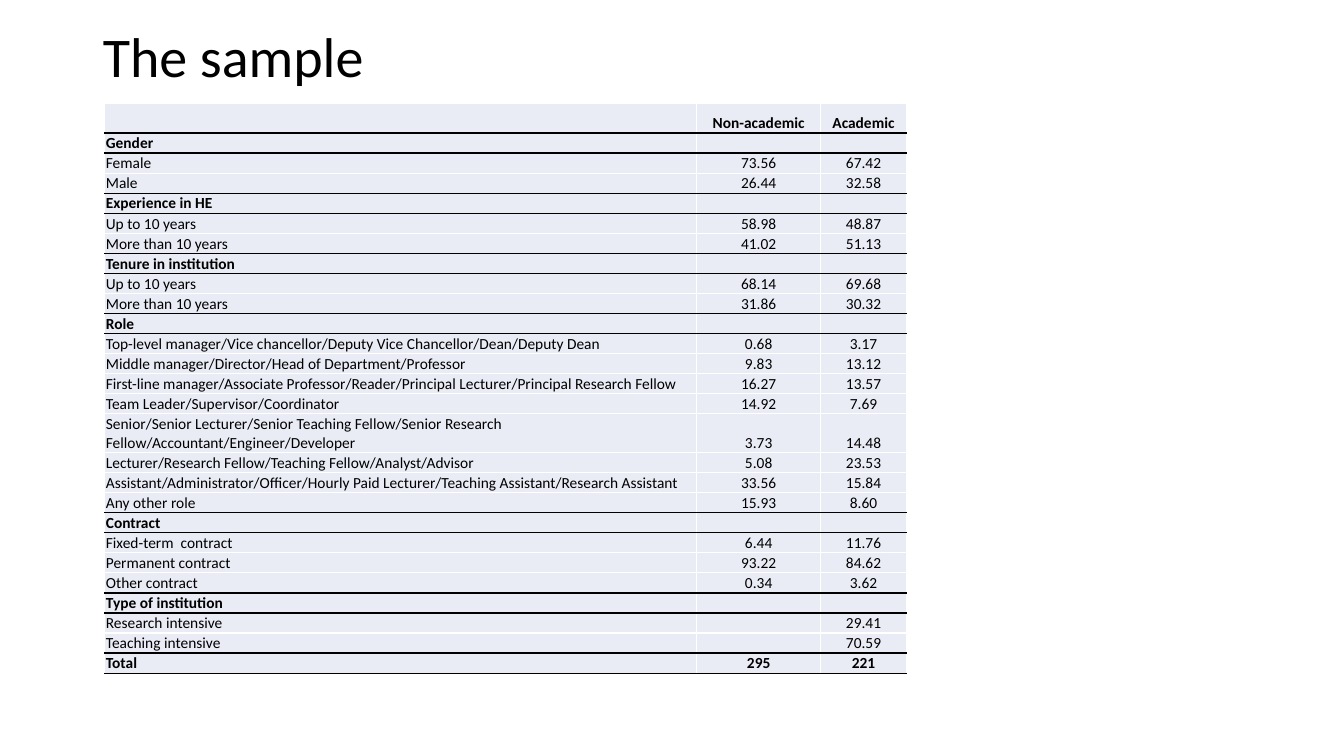
import lxml.etree
import pptx
import pptx.dml.color
import pptx.enum.text
import pptx.oxml.ns
import pptx.util

Inches = pptx.util.Inches
Pt = pptx.util.Pt
qn = pptx.oxml.ns.qn
BLACK = pptx.dml.color.RGBColor(0x00, 0x00, 0x00)
WHITE = pptx.dml.color.RGBColor(0xFF, 0xFF, 0xFF)
PALE_BLUE = pptx.dml.color.RGBColor(0xE9, 0xEB, 0xF5)
FONT = "Calibri"
TEXT_SIZE = Pt(11)
COLUMN_WIDTHS = [5.87, 1.23, 0.85]
ROW_HEIGHT = 0.18
TALL_ROWS = {0: 0.29, 15: 0.37}

sample_rows = [
    ("", "Non-academic", "Academic"),
    ("Gender", "", ""),
    ("Female", "73.56", "67.42"),
    ("Male", "26.44", "32.58"),
    ("Experience in HE", "", ""),
    ("Up to 10 years", "58.98", "48.87"),
    ("More than 10 years", "41.02", "51.13"),
    ("Tenure in institution", "", ""),
    ("Up to 10 years", "68.14", "69.68"),
    ("More than 10 years", "31.86", "30.32"),
    ("Role", "", ""),
    ("Top-level manager/Vice chancellor/Deputy Vice Chancellor/Dean/Deputy Dean", "0.68", "3.17"),
    ("Middle manager/Director/Head of Department/Professor", "9.83", "13.12"),
    ("First-line manager/Associate Professor/Reader/Principal Lecturer/Principal Research Fellow", "16.27", "13.57"),
    ("Team Leader/Supervisor/Coordinator", "14.92", "7.69"),
    ("Senior/Senior Lecturer/Senior Teaching Fellow/Senior Research Fellow/Accountant/Engineer/Developer", "3.73", "14.48"),
    ("Lecturer/Research Fellow/Teaching Fellow/Analyst/Advisor", "5.08", "23.53"),
    ("Assistant/Administrator/Officer/Hourly Paid Lecturer/Teaching Assistant/Research Assistant", "33.56", "15.84"),
    ("Any other role", "15.93", "8.60"),
    ("Contract", "", ""),
    ("Fixed-term  contract", "6.44", "11.76"),
    ("Permanent contract", "93.22", "84.62"),
    ("Other contract", "0.34", "3.62"),
    ("Type of institution", "", ""),
    ("Research intensive", "", "29.41"),
    ("Teaching intensive", "", "70.59"),
    ("Total", "295", "221"),
]


def add_border(cell, side, color):
    line = lxml.etree.SubElement(cell._tc.get_or_add_tcPr(), qn("a:" + side), w=str(Pt(1)))
    fill = lxml.etree.SubElement(line, qn("a:solidFill"))
    lxml.etree.SubElement(fill, qn("a:srgbClr"), val=str(color))


deck = pptx.Presentation()
deck.slide_width = Inches(13.33)
deck.slide_height = Inches(7.5)
page = deck.slides.add_slide(deck.slide_layouts[5])

title = page.shapes.title
title.left, title.top = Inches(0.92), Inches(0.15)
title.width, title.height = Inches(11.5), Inches(0.88)
title.text_frame.text = "The sample"
title.text_frame.vertical_anchor = pptx.enum.text.MSO_ANCHOR.MIDDLE
para = title.text_frame.paragraphs[0]
para.alignment = pptx.enum.text.PP_ALIGN.LEFT
para.line_spacing = 0.9
para.runs[0].font.name = FONT
para.runs[0].font.size = Pt(40)
para.runs[0].font.color.rgb = BLACK

heights = [TALL_ROWS.get(number, ROW_HEIGHT) for number in range(len(sample_rows))]
table = page.shapes.add_table(
    len(sample_rows), len(COLUMN_WIDTHS),
    Inches(1.04), Inches(1.03), Inches(sum(COLUMN_WIDTHS)), Inches(sum(heights)),
).table
table.first_row = False
table.horz_banding = False
for column, width in zip(table.columns, COLUMN_WIDTHS):
    column.width = Inches(width)

ruled = [label == "Total" or not any(values) for label, *values in sample_rows]
edges = [above or below for above, below in zip([False] + ruled, ruled + [False])]

for row_number, texts in enumerate(sample_rows):
    table.rows[row_number].height = Inches(heights[row_number])
    for column_number, text in enumerate(texts):
        cell = table.cell(row_number, column_number)
        cell.margin_left = cell.margin_right = cell.margin_top = Inches(0.01)
        cell.margin_bottom = 0
        cell.vertical_anchor = pptx.enum.text.MSO_ANCHOR.BOTTOM
        add_border(cell, "lnL", WHITE)
        add_border(cell, "lnR", WHITE)
        add_border(cell, "lnT", BLACK if edges[row_number] else WHITE)
        add_border(cell, "lnB", BLACK if edges[row_number + 1] else WHITE)
        cell.fill.solid()
        cell.fill.fore_color.rgb = PALE_BLUE
        para = cell.text_frame.paragraphs[0]
        if column_number > 0:
            para.alignment = pptx.enum.text.PP_ALIGN.CENTER
        if text:
            para.text = text
            font = para.runs[0].font
            font.name = FONT
            font.size = TEXT_SIZE
            font.bold = row_number == 0 or ruled[row_number]
            font.color.rgb = BLACK
        else:
            lxml.etree.SubElement(para._p, qn("a:endParaRPr"), sz="1100")

deck.save("out.pptx")
